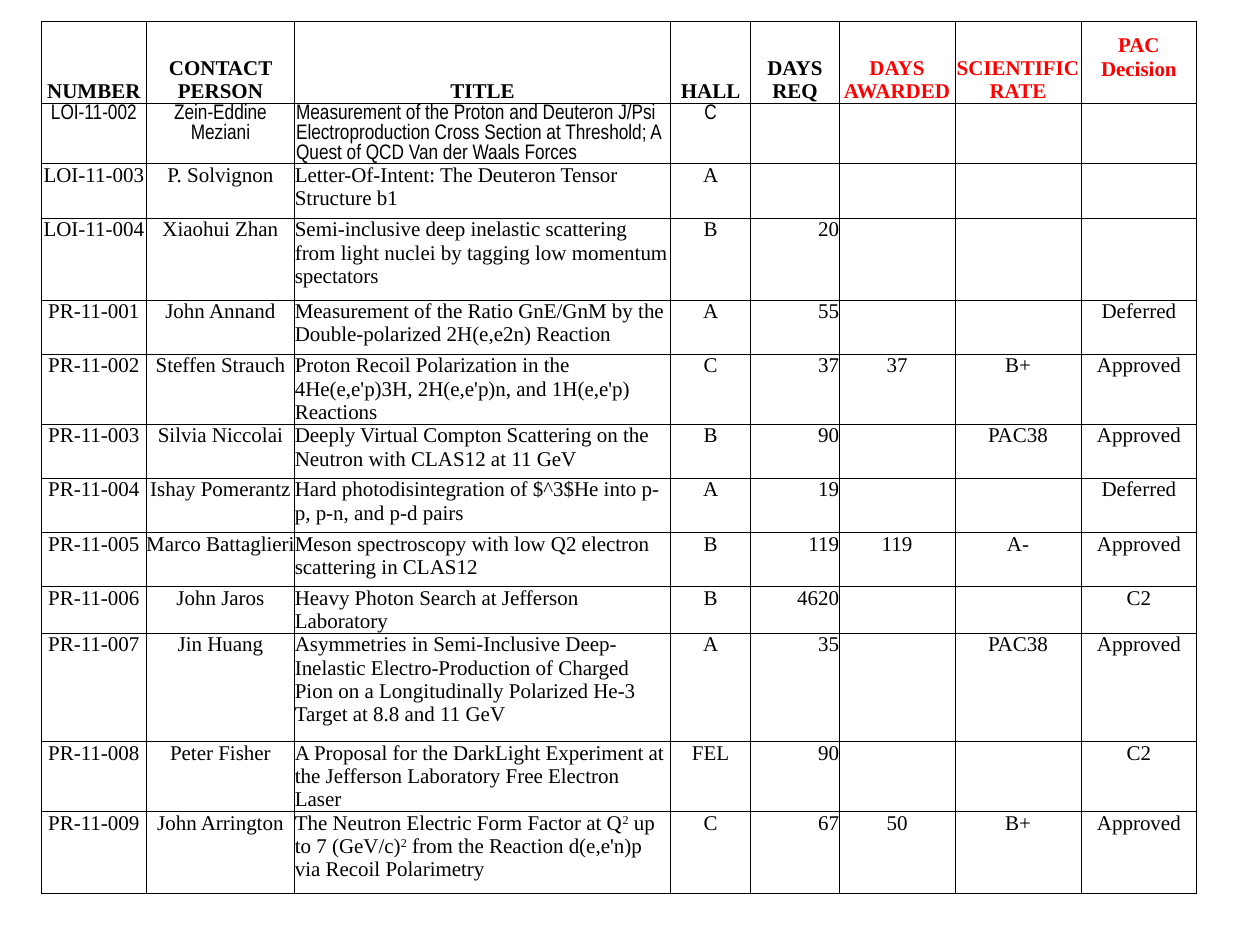
from lxml import etree
from pptx import Presentation, util as u
from pptx.dml.color import RGBColor
from pptx.enum import text
from pptx.oxml.ns import qn

BLACK, RED = "000000", "FF0000"
WIDTHS = [0.83, 1.18, 2.98, 0.64, 0.7, 0.92, 1, 0.92]
TALL = [0.65, 0.43, 0.43, 0.65, 0.43, 0.43, 0.43, 0.43, 0.43, 0.22, 0.86, 0.43, 0.65]
HEAD = ["NUMBER", "CONTACT PERSON", "TITLE", "HALL", "DAYS\nREQ",
        "DAYS\nAWARDED", "SCIENTIFIC\nRATE", "PAC Decision"]
BODY = [
    ["LOI-11-002", "Zein-Eddine Meziani",
     "Measurement of the Proton and Deuteron J/Psi Electroproduction Cross Section "
     "at Threshold; A Quest of QCD Van der Waals Forces", "C", "", "", "", ""],
    ["LOI-11-003", "P. Solvignon",
     "Letter-Of-Intent: The Deuteron Tensor Structure b1", "A", "", "", "", ""],
    ["LOI-11-004", "Xiaohui Zhan",
     "Semi-inclusive deep inelastic scattering from light nuclei by tagging "
     "low momentum spectators", "B", "20", "", "", ""],
    ["PR-11-001", "John Annand",
     "Measurement of the Ratio GnE/GnM by the Double-polarized 2H(e,e2n) Reaction",
     "A", "55", "", "", "Deferred"],
    ["PR-11-002", "Steffen Strauch",
     "Proton Recoil Polarization in the 4He(e,e'p)3H, 2H(e,e'p)n, and 1H(e,e'p) Reactions",
     "C", "37", "37", "B+", "Approved"],
    ["PR-11-003", "Silvia Niccolai",
     "Deeply Virtual Compton Scattering on the Neutron with CLAS12 at 11 GeV",
     "B", "90", "", "PAC38", "Approved"],
    ["PR-11-004", "Ishay Pomerantz",
     "Hard photodisintegration of $^3$He into p-p, p-n, and p-d pairs",
     "A", "19", "", "", "Deferred"],
    ["PR-11-005", "Marco Battaglieri",
     "Meson spectroscopy with low Q2 electron scattering in CLAS12",
     "B", "119", "119", "A-", "Approved"],
    ["PR-11-006", "John Jaros", "Heavy Photon Search at Jefferson Laboratory",
     "B", "4620", "", "", "C2"],
    ["PR-11-007", "Jin Huang",
     "Asymmetries in Semi-Inclusive Deep-Inelastic Electro-Production of Charged Pion "
     "on a Longitudinally Polarized He-3 Target at 8.8 and 11 GeV",
     "A", "35", "", "PAC38", "Approved"],
    ["PR-11-008", "Peter Fisher",
     "A Proposal for the DarkLight Experiment at the Jefferson Laboratory "
     "Free Electron Laser", "FEL", "90", "", "", "C2"],
    ["PR-11-009", "John Arrington",
     "The Neutron Electric Form Factor at Q² up to 7 (GeV/c)² from the Reaction "
     "d(e,e'n)p via Recoil Polarimetry", "C", "67", "50", "B+", "Approved"],
]


def rgb(code):
    return RGBColor.from_string(code)


def frame(cell):
    """Draw a thin black border on all four sides."""
    props = cell._tc.get_or_add_tcPr()
    for side in ("lnL", "lnR", "lnT", "lnB"):
        line = etree.SubElement(props, qn("a:" + side), w=str(u.Pt(0.5)))
        fill = etree.SubElement(line, qn("a:solidFill"))
        etree.SubElement(fill, qn("a:srgbClr"), val=BLACK)


prs = Presentation()
prs.slide_width, prs.slide_height = u.Inches(10), u.Inches(7.5)
slide = prs.slides.add_slide(prs.slide_layouts[6])

# Table grid
rows = [HEAD] + BODY
table = slide.shapes.add_table(len(rows), len(HEAD), u.Inches(0.33), u.Inches(0.17),
                               u.Inches(sum(WIDTHS)), u.Inches(sum(TALL))).table
table.first_row = table.horz_banding = False
for col, wide in zip(table.columns, WIDTHS):
    col.width = u.Inches(wide)
for row, high in zip(table.rows, TALL):
    row.height = u.Inches(high)

# Cells
align = [text.PP_ALIGN.CENTER] * len(HEAD)
align[2], align[4] = text.PP_ALIGN.LEFT, text.PP_ALIGN.RIGHT
for r, row in enumerate(rows):
    pad = u.Inches(0.01 if r == 1 else 0)
    for c, words in enumerate(row):
        cell = table.cell(r, c)
        frame(cell)
        cell.fill.background()
        cell.margin_left = cell.margin_right = cell.margin_top = pad
        cell.margin_bottom = 0
        para = cell.text_frame.paragraphs[0]
        para.alignment = align[c] if r else text.PP_ALIGN.CENTER
        font = para.font
        font.size = u.Pt(12)
        font.name = "Arial Narrow" if r == 1 else "Times New Roman"
        font.bold = r == 0
        font.color.rgb = rgb(RED if r == 0 and c > 4 else BLACK)
        if r == 0:
            cell.vertical_anchor = text.MSO_ANCHOR.BOTTOM
        # Raised squares become superscript runs
        first, *rest = words.split("²")
        para.text = first
        for part in rest:
            power = para.add_run()
            power.text = "2"
            power.font._element.set("baseline", "30000")
            para.add_run().text = part

# The last heading sits one line higher
table.cell(0, 7).margin_bottom = u.Inches(0.18)

prs.save("out.pptx")
